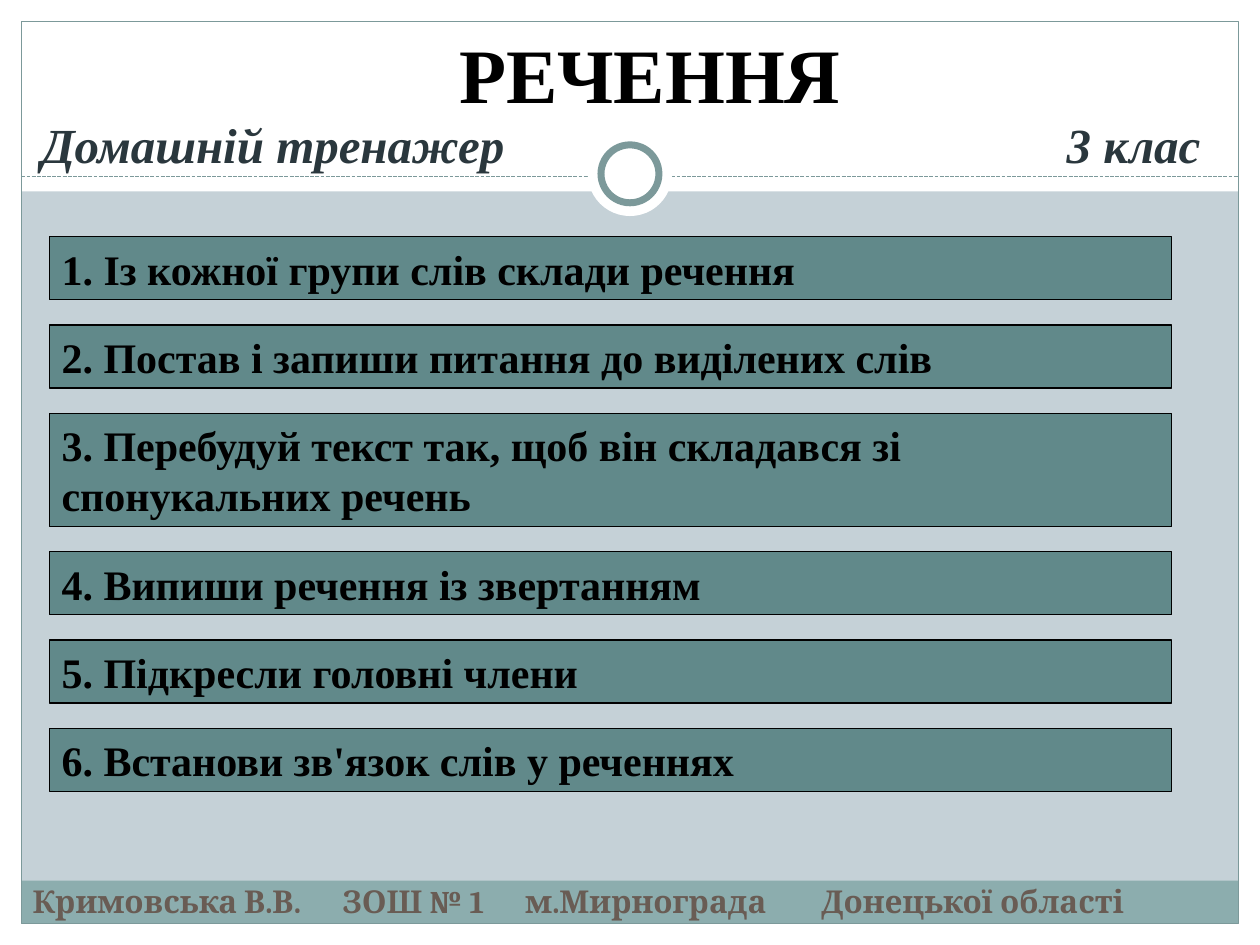
from lxml.etree import SubElement
from pptx import Presentation
from pptx.dml.color import RGBColor
from pptx.enum.dml import MSO_LINE
from pptx.enum.shapes import MSO_CONNECTOR, MSO_SHAPE
from pptx.enum.text import MSO_ANCHOR, PP_ALIGN
from pptx.oxml import parse_xml
from pptx.oxml.ns import nsdecls, qn
from pptx.util import Inches, Pt

WIDE, HIGH = 10, 7.5
EDGE = 0.17
WHITE, BLACK, TEAL = "FFFFFF", "000000", "7C999A"
SERIF = "Times New Roman"
TASKS = [
    ("1. Із кожної групи слів склади речення", 1),
    ("2. Постав і запиши питання до виділених слів", 1),
    ("3. Перебудуй текст так, щоб він складався зі спонукальних речень", 2),
    ("4. Випиши речення із звертанням", 1),
    ("5. Підкресли головні члени", 1),
    ("6. Встанови зв'язок слів у реченнях", 1),
]


def color(code):
    return RGBColor.from_string(code)


def add_form(slide, box, fill=None, line=None, width=0.75, kind=MSO_SHAPE.RECTANGLE):
    form = slide.shapes.add_shape(kind, *map(Inches, box))
    form.shadow.inherit = False
    if fill:
        form.fill.solid()
        form.fill.fore_color.rgb = color(fill)
    else:
        form.fill.background()
    if line:
        form.line.color.rgb = color(line)
        form.line.width = Pt(width)
    else:
        form.line.fill.background()
    return form


def add_ring(slide, size, y, line=None):
    box = ((WIDE - size) / 2, y - size / 2, size, size)
    add_form(slide, box, WHITE, line, 4, MSO_SHAPE.OVAL)


def add_rule(slide, y):
    rule = slide.shapes.add_connector(
        MSO_CONNECTOR.STRAIGHT, *map(Inches, (EDGE, y, WIDE - EDGE, y)))
    rule.line.color.rgb = color(TEAL)
    rule.line.width = Pt(0.75)
    rule.line.dash_style = MSO_LINE.SQUARE_DOT
    SubElement(rule.element.spPr, qn("a:effectLst"))


def write(shape, text, size, ink, font=SERIF, italic=False, align=PP_ALIGN.LEFT):
    frame = shape.text_frame
    frame.word_wrap = True
    frame.vertical_anchor = MSO_ANCHOR.TOP
    frame.text = text
    para = frame.paragraphs[0]
    para.alignment = align
    para.font.name = font
    para.font.size = Pt(size)
    para.font.bold = True
    para.font.italic = italic
    para.font.color.rgb = color(ink)
    return para


def add_tabs(para, stops, align="l"):
    tabs = parse_xml(f"<a:tabLst {nsdecls('a')}/>")
    for stop in stops:
        SubElement(tabs, qn("a:tab"), pos=str(Inches(stop)), algn=align)
    para._p.get_or_add_pPr().insert(0, tabs)


def add_text(slide, box, *args, **style):
    return write(slide.shapes.add_textbox(*map(Inches, box)), *args, **style)


def add_title(slide, text):
    title = slide.shapes.title
    title.left, title.top, title.width, title.height = map(
        Inches, (0.55, 0.16, 9.22, 0.84))
    write(title, text, 44, BLACK, align=PP_ALIGN.CENTER)
    # Bring the title in front of the white bands
    title.element.getparent().append(title.element)


def add_frame(slide):
    for box in [(0, HIGH - EDGE, WIDE, EDGE), (0, 0, WIDE, 1.52),
                (0, 0, EDGE, HIGH), (WIDE - EDGE, 0, EDGE, HIGH)]:
        add_form(slide, box, WHITE)
    inner = WIDE - 2 * EDGE
    add_form(slide, (EDGE, 6.99, inner, 0.34), "8CADAE")
    add_form(slide, (EDGE, EDGE, inner, HIGH - 2 * EDGE), line=TEAL)
    add_rule(slide, 1.4)
    add_ring(slide, 0.67, 1.38)
    add_ring(slide, 0.46, 1.38, TEAL)


def add_tasks(slide, top=1.88, gap=0.2):
    for text, rows in TASKS:
        height = 0.5 + 0.4 * (rows - 1)
        bar = add_form(slide, (0.39, top, 8.91, height), "61898A", BLACK)
        write(bar, text, 24, BLACK)
        top += height + gap


def main():
    deck = Presentation()
    deck.slide_width, deck.slide_height = Inches(WIDE), Inches(HIGH)
    slide = deck.slides.add_slide(deck.slide_layouts[5])
    slide.background.fill.solid()
    slide.background.fill.fore_color.rgb = color("C5D1D7")
    add_frame(slide)
    add_title(slide, "РЕЧЕННЯ")
    add_tasks(slide)
    head = add_text(slide, (0.23, 0.86, 9.53, 0.57),
                    "Домашній тренажер\t3 клас", 28, "2A373D", italic=True)
    add_tabs(head, [9.2], "r")
    foot = add_text(slide, (0.16, 6.95, 9.61, 0.4),
                    "Кримовська В.В.\tЗОШ № 1\tм.Мирнограда\tДонецької області",
                    18, "695C54", "Cambria")
    add_tabs(foot, [2.46, 3.91, 6.26])
    deck.save("out.pptx")


if __name__ == "__main__":
    main()
